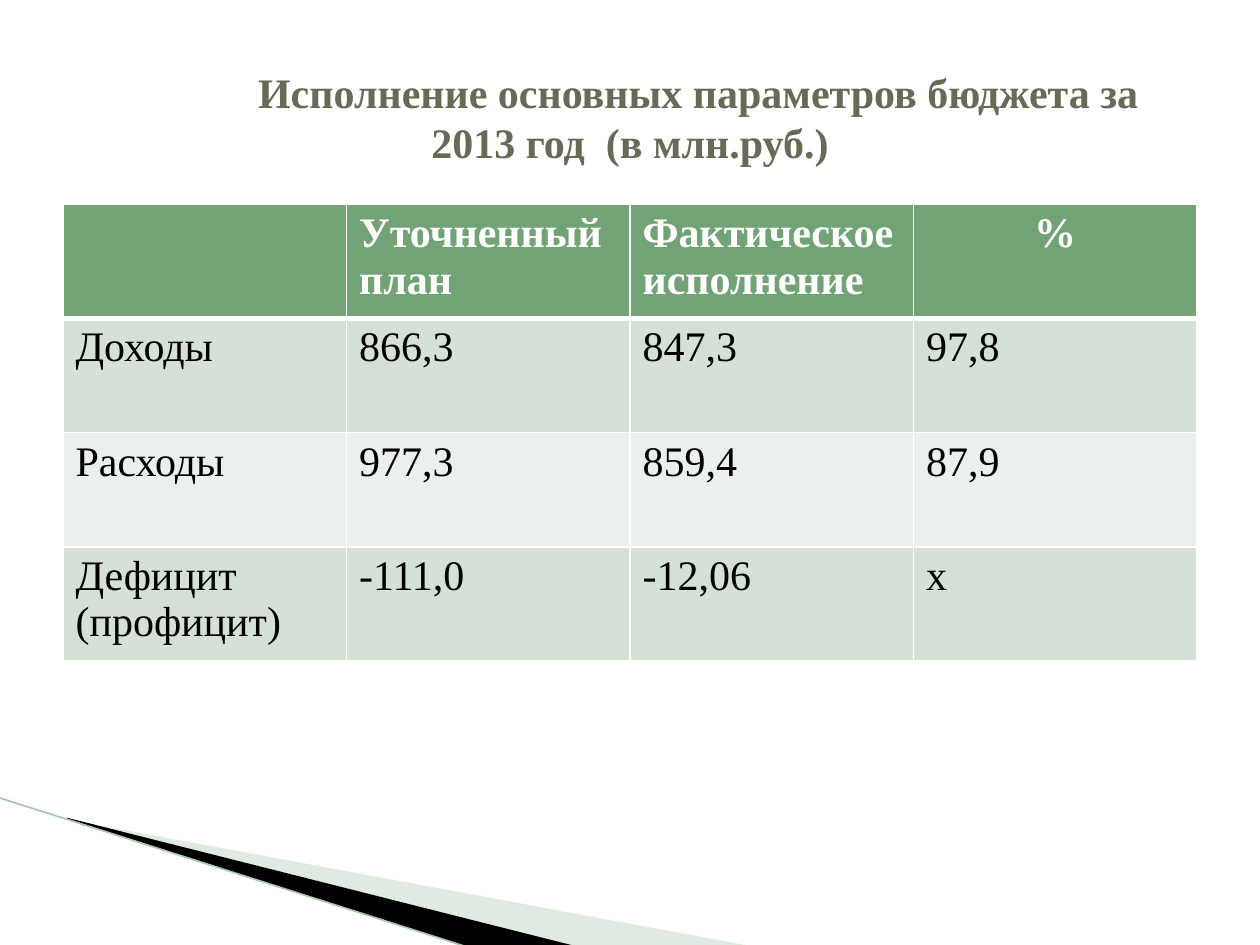
from dataclasses import dataclass, field
from lxml import etree
from pptx import Presentation, util as u
from pptx.dml.color import RGBColor
from pptx.enum import shapes, text
from pptx.oxml.ns import qn

COLORS = {
    "white": "FFFFFF", "black": "000000", "title": "676A55",
    "header": "72A376", "odd": "D5E0D6", "even": "EBF0EC",
    "wedge": "B3CBB5", "rule": "ACC6AE",
}
ROWS = [
    ["", "Уточненный план", "Фактическое исполнение", "%"],
    ["Доходы", "866,3", "847,3", "97,8"],
    ["Расходы", "977,3", "859,4", "87,9"],
    ["Дефицит (профицит)", "-111,0", "-12,06", "х"],
]


def rgb(name):
    return RGBColor.from_string(COLORS[name])


def write(tf, content, font="Times New Roman", size=24, color="black",
          bold=False, align=text.PP_ALIGN.LEFT):
    p = tf.paragraphs[0]
    p.alignment = align
    r = p.add_run()
    r.text = content
    r.font.name = font
    r.font.size = u.Pt(size)
    r.font.bold = bold
    r.font.color.rgb = rgb(color)
    return p


@dataclass
class Deck:
    prs: object = field(default_factory=Presentation)
    s: object = None

    def add_slide(self, width, height):
        self.prs.slide_width, self.prs.slide_height = u.Pt(width), u.Pt(height)
        self.s = self.prs.slides.add_slide(self.prs.slide_layouts[5])
        self.s.background.fill.solid()
        self.s.background.fill.fore_color.rgb = rgb("white")

    def title(self, content, x, y, w, h, indent):
        sp = self.s.shapes.title
        sp.left, sp.top, sp.width, sp.height = map(u.Pt, (x, y, w, h))
        tf = sp.text_frame
        tf.word_wrap = True
        tf.auto_size = text.MSO_AUTO_SIZE.NONE
        tf.vertical_anchor = text.MSO_ANCHOR.MIDDLE
        p = write(tf, content, color="title", bold=True, align=text.PP_ALIGN.CENTER)
        p._p.get_or_add_pPr().set("indent", str(u.Pt(indent)))

    def polygon(self, points, color, alpha=None):
        start, *rest = [(u.Pt(x), u.Pt(y)) for x, y in points]
        fb = self.s.shapes.build_freeform(*start)
        fb.add_line_segments(rest, close=True)
        sp = fb.convert_to_shape()
        sp.shadow.inherit = False
        sp.line.fill.background()
        sp.fill.solid()
        sp.fill.fore_color.rgb = rgb(color)
        if alpha is not None:
            clr = sp._element.spPr.find(".//" + qn("a:srgbClr"))
            etree.SubElement(clr, qn("a:alpha"), val=str(alpha * 1000))

    def line(self, x1, y1, x2, y2, color, width):
        cx = self.s.shapes.add_connector(
            shapes.MSO_CONNECTOR.STRAIGHT, *map(u.Pt, (x1, y1, x2, y2)))
        cx.line.color.rgb = rgb(color)
        cx.line.width = u.Pt(width)
        etree.SubElement(cx._element.spPr, qn("a:effectLst"))

    def borders(self, cell, bottom, top):
        tcPr = cell._tc.get_or_add_tcPr()
        widths = {"lnL": 1, "lnR": 1, "lnT": top, "lnB": bottom}
        for i, (side, width) in enumerate(widths.items()):
            ln = etree.Element(qn("a:" + side), w=str(u.Pt(width)))
            fill = etree.SubElement(ln, qn("a:solidFill"))
            etree.SubElement(fill, qn("a:srgbClr"), val=COLORS["white"])
            tcPr.insert(i, ln)

    def table(self, rows, x, y, w, h):
        tbl = self.s.shapes.add_table(
            len(rows), len(rows[0]), *map(u.Pt, (x, y, w, h))).table
        for i, row in enumerate(rows):
            head = i == 0
            for j, value in enumerate(row):
                cell = tbl.cell(i, j)
                cell.fill.solid()
                cell.fill.fore_color.rgb = rgb(
                    "header" if head else "odd" if i % 2 else "even")
                self.borders(cell, bottom=3 if head else 1, top=3 if i == 1 else 1)
                if value:
                    write(cell.text_frame, value, bold=head,
                          color="white" if head else "black",
                          align=text.PP_ALIGN.CENTER if value == "%"
                          else text.PP_ALIGN.LEFT)


def main():
    deck = Deck()
    deck.add_slide(720, 540)
    deck.polygon([(39.6, 468.5), (428.4, 540.5), (328.3, 540.5), (39.6, 468)],
                 "wedge", alpha=40)
    deck.polygon([(38.2, 467.3), (329, 540.7), (267.8, 541.4), (38.9, 468)], "black")
    deck.line(-0.7, 455.8, 267.8, 541.4, "rule", 0.95)
    deck.table(ROWS, 36, 116.6, 648, 261.2)
    deck.title("Исполнение основных параметров бюджета за 2013 год  (в млн.руб.)",
               36, 21.6, 648, 90, indent=78)
    deck.prs.save("out.pptx")


if __name__ == "__main__":
    main()
